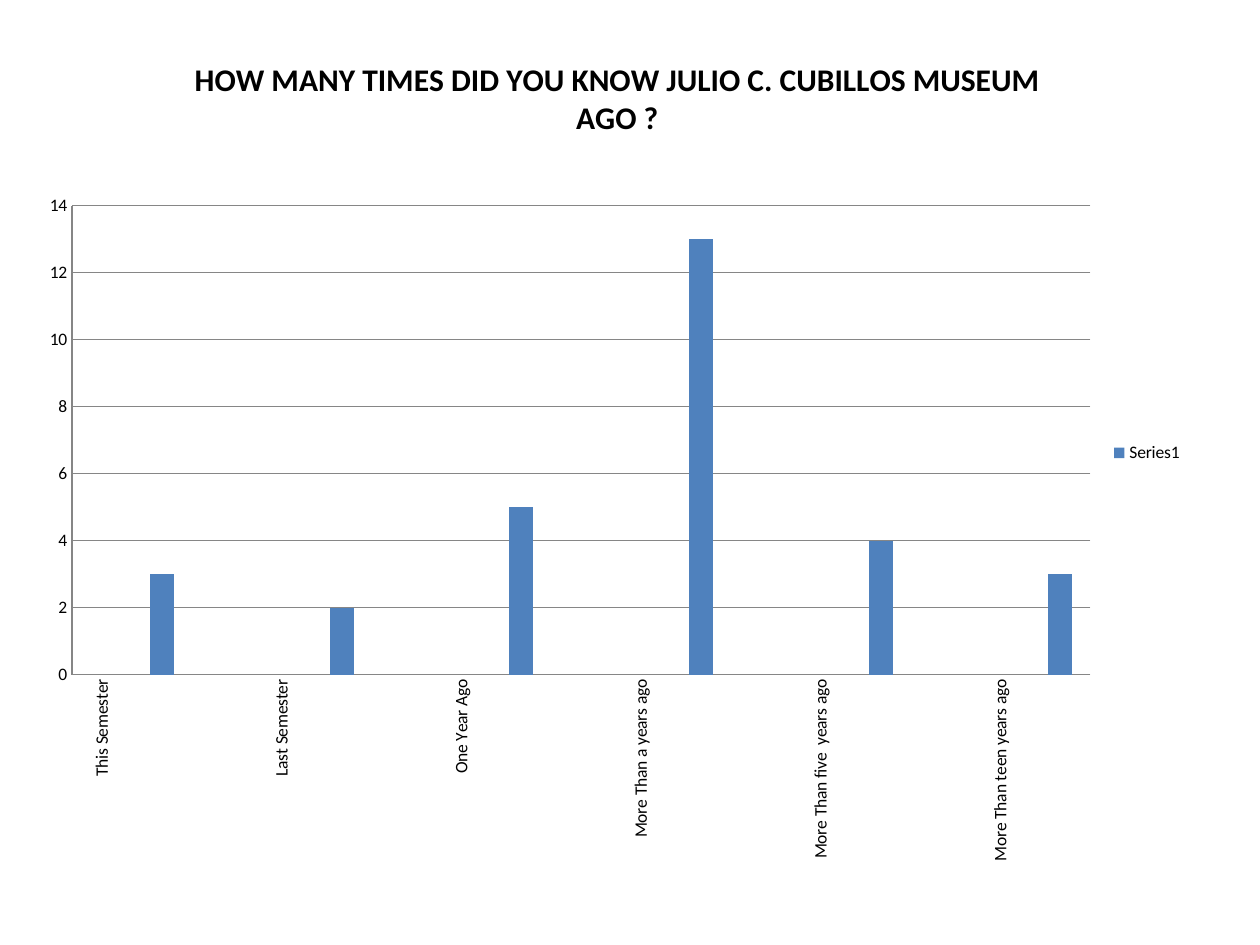
from lxml import etree
from pptx import Presentation
from pptx.chart.data import CategoryChartData
from pptx.dml.color import RGBColor
from pptx.enum.chart import XL_CHART_TYPE, XL_LEGEND_POSITION, XL_TICK_MARK
from pptx.oxml.ns import qn
from pptx.util import Pt

COLUMNS = XL_CHART_TYPE.COLUMN_CLUSTERED
LEGEND_RIGHT = XL_LEGEND_POSITION.RIGHT
NO_TICKS = XL_TICK_MARK.NONE

TITLE = "HOW MANY TIMES DID YOU KNOW JULIO C. CUBILLOS MUSEUM AGO ?"
SERIES_NAME = "Series1"
ANSWERS = [
    ("This Semester", 3),
    ("Last Semester", 2),
    ("One Year Ago", 5),
    ("More Than a years ago", 13),
    ("More Than five  years ago", 4),
    ("More Than teen years ago", 3),
]
THEME = {
    "font": "Calibri",
    "title_size": 18,
    "label_size": 10,
    "text": RGBColor(0, 0, 0),
    "bar": RGBColor(0x4F, 0x81, 0xBD),
    "line": RGBColor(0x86, 0x86, 0x86),
}
CHART_BOX = (14.4, 15.1, 668.9, 487.4)
TITLE_PLACE = {"x": 0.14, "y": 0.03}
PLOT_PLACE = {"x": 0.04, "y": 0.21, "w": 0.87, "h": 0.55}


def format_font(font, size, bold=False):
    font.name = THEME["font"]
    font.size = Pt(size)
    font.bold = bold
    font.color.rgb = THEME["text"]


def write_text(text_frame, text, **text_format):
    paragraph = text_frame.paragraphs[0]
    run = paragraph.add_run()
    run.text = text
    format_font(run.font, **text_format)


def place(element, position, index, target=None):
    for old_layout in element.findall(qn("c:layout")):
        element.remove(old_layout)
    layout = etree.Element(qn("c:layout"))
    manual = etree.SubElement(layout, qn("c:manualLayout"))
    if target:
        etree.SubElement(manual, qn("c:layoutTarget")).set("val", target)
    for key in ("x", "y"):
        etree.SubElement(manual, qn(f"c:{key}Mode")).set("val", "edge")
    for key, value in position.items():
        etree.SubElement(manual, qn(f"c:{key}")).set("val", str(value))
    element.insert(index, layout)


def answer_data():
    categories, values = [], []
    for label, count in ANSWERS:
        categories += [label, "", ""]
        values += [None, count, None]
    data = CategoryChartData()
    data.categories = categories[:-1]
    data.add_series(SERIES_NAME, values[:-1])
    return data


def style_axis(axis):
    axis.major_tick_mark = NO_TICKS
    axis.minor_tick_mark = NO_TICKS
    axis.format.line.color.rgb = THEME["line"]
    axis.format.line.width = Pt(0.75)
    format_font(axis.tick_labels.font, THEME["label_size"])


def add_answer_chart(slide):
    box = [Pt(length) for length in CHART_BOX]
    chart = slide.shapes.add_chart(COLUMNS, *box, answer_data()).chart
    format_font(chart.font, THEME["label_size"])

    chart.has_title = True
    write_text(chart.chart_title.text_frame, TITLE,
               size=THEME["title_size"], bold=True)
    chart.chart_title.include_in_layout = False
    place(chart.chart_title._element, TITLE_PLACE, 1)

    chart.has_legend = True
    chart.legend.position = LEGEND_RIGHT
    chart.legend.include_in_layout = False
    format_font(chart.legend.font, THEME["label_size"])

    plot = chart.plots[0]
    plot.gap_width = 150
    plot.vary_by_categories = False
    fill = plot.series[0].format.fill
    fill.solid()
    fill.fore_color.rgb = THEME["bar"]

    style_axis(chart.category_axis)
    style_axis(chart.value_axis)
    label_body = chart.category_axis._element.find(qn("c:txPr")).find(qn("a:bodyPr"))
    label_body.set("rot", "-5400000")
    label_body.set("vert", "horz")

    value_axis = chart.value_axis
    value_axis.minimum_scale = 0
    value_axis.maximum_scale = 14
    value_axis.major_unit = 2
    value_axis.has_major_gridlines = True
    value_axis.major_gridlines.format.line.color.rgb = THEME["line"]
    value_axis.major_gridlines.format.line.width = Pt(0.75)

    plot_area = chart._chartSpace.find(qn("c:chart")).find(qn("c:plotArea"))
    place(plot_area, PLOT_PLACE, 0, target="inner")


def main():
    presentation = Presentation()
    presentation.slide_width = Pt(720)
    presentation.slide_height = Pt(540)
    slide = presentation.slides.add_slide(presentation.slide_layouts[6])
    add_answer_chart(slide)
    presentation.save("out.pptx")


if __name__ == "__main__":
    main()
